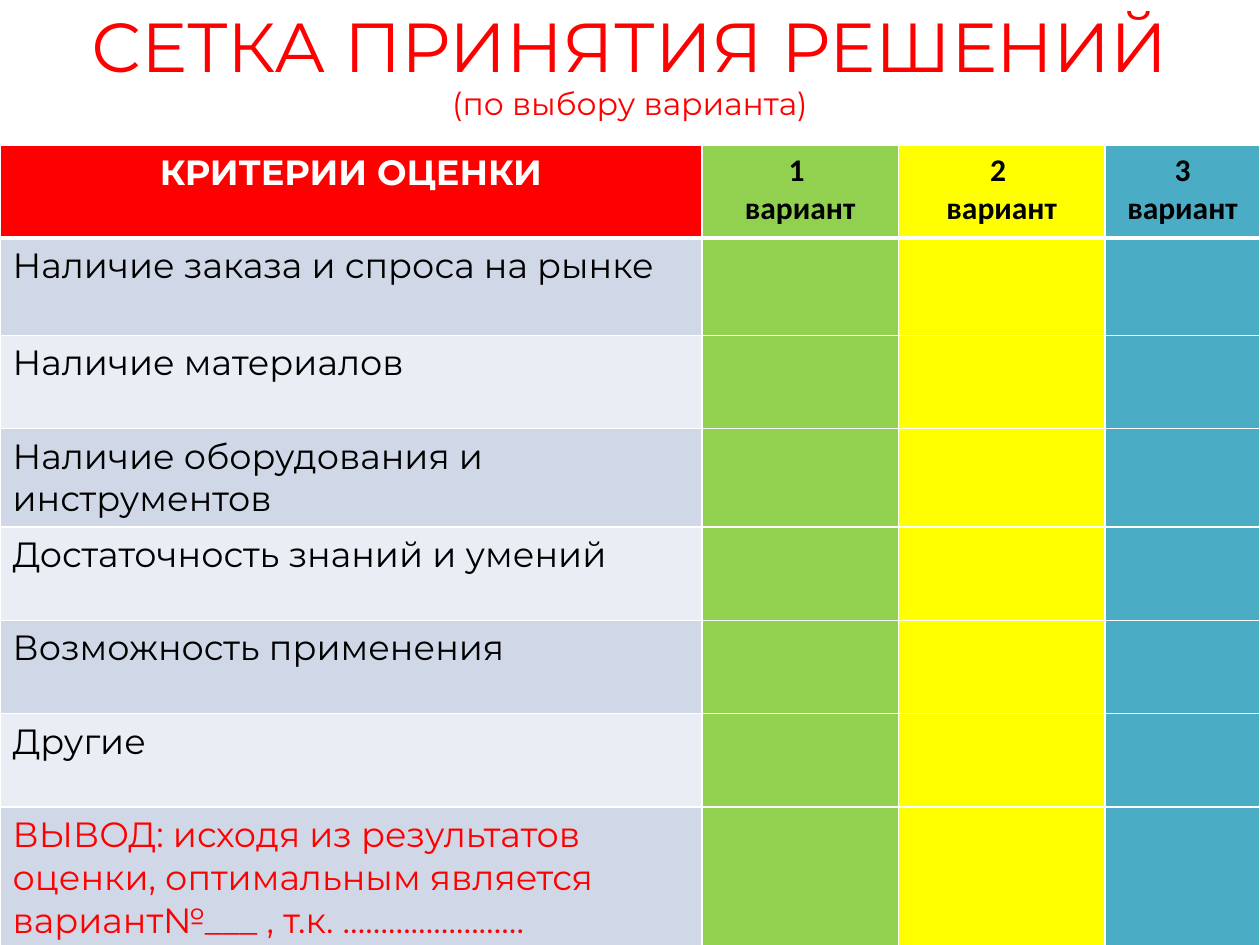
from lxml import etree
from pptx import Presentation
from pptx.dml.color import RGBColor
from pptx.enum import text
from pptx.oxml import ns
from pptx.util import Cm, Pt

RED, WHITE, BLACK = "FF0000", "FFFFFF", "000000"
OPTION_FILLS = ["92D050", "FFFF00", "4BACC6"]
BAND_FILLS = ["D0D8E8", "E9EDF4"]
COLUMN_WIDTHS = [14.15, 3.96, 4.17, 3.12]
ROW_HEIGHTS = [1.88, 1.96, 1.88, 1.96, 1.88, 1.88, 1.88, 2.8]
OPTIONS = [["1 ", "вариант"], ["2 ", "вариант"], ["3 вариант"]]
CRITERIA = [
    "Наличие заказа и спроса на рынке",
    "Наличие материалов",
    "Наличие оборудования и инструментов",
    "Достаточность знаний и умений",
    "Возможность применения",
    "Другие",
]
CONCLUSION = ("ВЫВОД: исходя из результатов оценки, оптимальным является "
              "вариант№___ , т.к. ……………………")


def colour(value):
    return RGBColor.from_string(value)


def add_span(para, words, size, hue, font="Montserrat", bold=False):
    span = para.add_run()
    span.text = words
    span.font.name = font
    span.font.size = Pt(size)
    span.font.bold = bold
    span.font.color.rgb = colour(hue)


def style_cell(cell, fill, bottom=1):
    """Give the cell white borders and a solid fill."""
    properties = cell._tc.get_or_add_tcPr()
    for side, width in (("L", 1), ("R", 1), ("T", 1), ("B", bottom)):
        line = etree.SubElement(properties, ns.qn("a:ln" + side), w=str(Pt(width)))
        solid = etree.SubElement(line, ns.qn("a:solidFill"))
        etree.SubElement(solid, ns.qn("a:srgbClr"), val=WHITE)
    cell.fill.solid()
    cell.fill.fore_color.rgb = colour(fill)


def write_cell(cell, lines, size, hue, font="Montserrat", bold=False, centred=False):
    frame = cell.text_frame
    for index, words in enumerate(lines):
        para = frame.add_paragraph() if index else frame.paragraphs[0]
        if centred:
            para.alignment = text.PP_ALIGN.CENTER
        add_span(para, words, size, hue, font, bold)


def place_title(page, left, top, width, height):
    title = page.shapes.title
    title.left, title.top, title.width, title.height = left, top, width, height
    frame = title.text_frame
    frame.word_wrap = True
    frame.auto_size = text.MSO_AUTO_SIZE.NONE
    frame.vertical_anchor = text.MSO_ANCHOR.MIDDLE
    para = frame.paragraphs[0]
    para.alignment = text.PP_ALIGN.CENTER
    para.line_spacing = 0.9
    add_span(para, "СЕТКА ПРИНЯТИЯ РЕШЕНИЙ", 39.6, RED)
    para.add_line_break()
    add_span(para, "(по выбору варианта)", 18, RED)


def place_decision_grid(page, left, top, width, height):
    grid = page.shapes.add_table(
        len(ROW_HEIGHTS), len(COLUMN_WIDTHS), left, top, width, height).table
    for column, share in zip(grid.columns, COLUMN_WIDTHS):
        column.width = int(width * share / sum(COLUMN_WIDTHS))
    for row, share in zip(grid.rows, ROW_HEIGHTS):
        row.height = int(height * share / sum(ROW_HEIGHTS))

    for index in range(len(ROW_HEIGHTS)):
        first = BAND_FILLS[(index - 1) % 2] if index else RED
        for column, fill in enumerate([first] + OPTION_FILLS):
            style_cell(grid.cell(index, column), fill, bottom=1 if index else 3)

    write_cell(grid.cell(0, 0), ["КРИТЕРИИ ОЦЕНКИ"], 20, WHITE, bold=True, centred=True)
    for column, lines in enumerate(OPTIONS, 1):
        write_cell(grid.cell(0, column), lines, 18, BLACK, "Calibri", True, True)
    for index, words in enumerate(CRITERIA, 1):
        write_cell(grid.cell(index, 0), [words], 20, BLACK)
    write_cell(grid.cell(len(CRITERIA) + 1, 0), [CONCLUSION], 20, RED)


def main():
    deck = Presentation()
    deck.slide_width, deck.slide_height = Cm(25.4), Cm(19.05)
    page = deck.slides.add_slide(deck.slide_layouts[5])
    grid_top = Cm(2.92)
    place_title(page, 0, 0, deck.slide_width, Cm(2.72))
    place_decision_grid(page, 0, grid_top, deck.slide_width, deck.slide_height - grid_top)
    deck.save("out.pptx")


if __name__ == "__main__":
    main()
